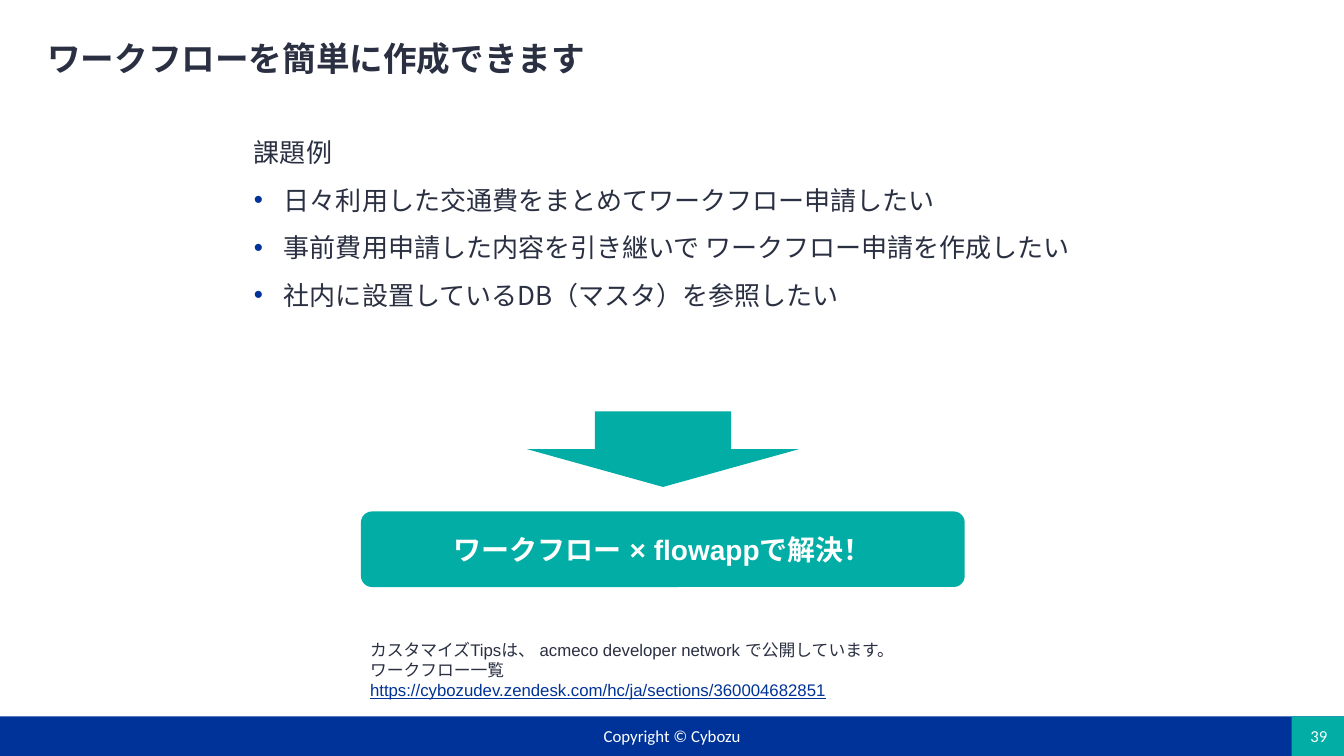
"""Build the slide on creating workflows easily."""
from lxml import etree
from pptx import Presentation
from pptx.dml.color import RGBColor
from pptx.enum import shapes, text
from pptx.oxml.ns import qn
from pptx.util import Pt

NAVY, TEAL, INK, WHITE = "003399", "01ADA4", "2A3042", "FFFFFF"
JAPANESE = "Noto Sans CJK JP"


def paint(target, colour):
    if hasattr(target, "solid"):
        target.solid()
        target = target.fore_color
    else:
        target = target.color
    target.rgb = RGBColor.from_string(colour)


def add_run(paragraph, words, size, face, colour, bold=False):
    run = paragraph.add_run()
    run.text = words
    run.font.size, run.font.name, run.font.bold = Pt(size), face, bold
    paint(run.font, colour)
    etree.SubElement(run.font._element, qn("a:ea"), typeface=face)
    return run


deck = Presentation()
deck.slide_width, deck.slide_height = Pt(960), Pt(540)
slide = deck.slides.add_slide(deck.slide_layouts[1])

heading = slide.shapes.title
heading.left, heading.top, heading.width, heading.height = Pt(26.6), Pt(20.9), Pt(864), Pt(45.4)
heading.text_frame.auto_size = text.MSO_AUTO_SIZE.NONE
heading.text_frame.vertical_anchor = text.MSO_ANCHOR.MIDDLE
headline = heading.text_frame.paragraphs[0]
headline.alignment, headline.line_spacing = text.PP_ALIGN.LEFT, 0.9
add_run(headline, "ワークフローを簡単に作成できます", 24, JAPANESE, INK, True)

issues = slide.placeholders[1]
issues.left, issues.top, issues.width, issues.height = Pt(174.2), Pt(90), Pt(612), Pt(156.2)
issues.text_frame.auto_size = text.MSO_AUTO_SIZE.NONE
issue_lines = [
    "課題例",
    "日々利用した交通費をまとめてワークフロー申請したい",
    "事前費用申請した内容を引き継いで ワークフロー申請を作成したい",
    "社内に設置しているDB（マスタ）を参照したい",
]
for number, words in enumerate(issue_lines):
    issue = issues.text_frame.paragraphs[0] if number == 0 else issues.text_frame.add_paragraph()
    issue.line_spacing = 1.17
    issue.space_before = Pt(8 if number else 0)
    indent = Pt(21.4 if number else 0)
    props = issue._p.get_or_add_pPr()
    props.set("marL", str(indent))
    props.set("indent", str(-indent))
    if number:
        bullet_colour = etree.SubElement(props, qn("a:buClr"))
        etree.SubElement(bullet_colour, qn("a:srgbClr"), val=NAVY)
        etree.SubElement(props, qn("a:buFont"), typeface="Arial")
        etree.SubElement(props, qn("a:buChar"), char="•")
    else:
        etree.SubElement(props, qn("a:buNone"))
    add_run(issue, words, 18.6, JAPANESE, INK)

kinds = shapes.MSO_SHAPE
blocks = [
    (kinds.RECTANGLE, 0, 511.7, 960, 28.3, NAVY),
    (kinds.RECTANGLE, 922.6, 511.7, 37.4, 28.3, TEAL),
    (kinds.DOWN_ARROW, 376.4, 293.8, 194.4, 54, TEAL),
    (kinds.ROUNDED_RECTANGLE, 257.8, 365.3, 431.3, 54, TEAL),
]
for kind, left, top, width, height, colour in blocks:
    block = slide.shapes.add_shape(kind, Pt(left), Pt(top), Pt(width), Pt(height))
    block.shadow.inherit = False
    block.line.fill.background()
    paint(block.fill, colour)

solution = block
solution.adjustments[0] = 0.146
solution.text_frame.vertical_anchor = text.MSO_ANCHOR.MIDDLE
answer = solution.text_frame.paragraphs[0]
answer.alignment = text.PP_ALIGN.CENTER
add_run(answer, "ワークフロー × flowappで解決！", 20, "Arial", WHITE, True)

footers = [
    ("Copyright © Cybozu", 318.2, 516.2, 324, 19.4),
    ("39", 920.9, 514.1, 42.5, 23),
]
for words, left, top, width, height in footers:
    footer = slide.shapes.add_textbox(Pt(left), Pt(top), Pt(width), Pt(height)).text_frame
    footer.word_wrap = True
    footer.vertical_anchor = text.MSO_ANCHOR.MIDDLE
    footer.paragraphs[0].alignment = text.PP_ALIGN.CENTER
    add_run(footer.paragraphs[0], words, 12, "Calibri", WHITE)

tips = slide.shapes.add_textbox(Pt(257.8), Pt(447.8), Pt(581.8), Pt(56.9)).text_frame
tips.word_wrap = True
tips.vertical_anchor = text.MSO_ANCHOR.MIDDLE
tips.margin_left = tips.margin_right = Pt(6.5)
tips.margin_top = tips.margin_bottom = Pt(4.3)
tips.paragraphs[0].line_spacing = 1.3
add_run(tips.paragraphs[0], "カスタマイズTipsは、 acmeco developer network で公開しています。", 12, "Arial", INK)
add_run(tips.add_paragraph(), "ワークフロー一覧", 12, "Arial", INK)
address = "https://cybozudev.zendesk.com/hc/ja/sections/360004682851"
add_run(tips.add_paragraph(), address, 12, "Arial", "003398").font.underline = True

deck.save("out.pptx")
